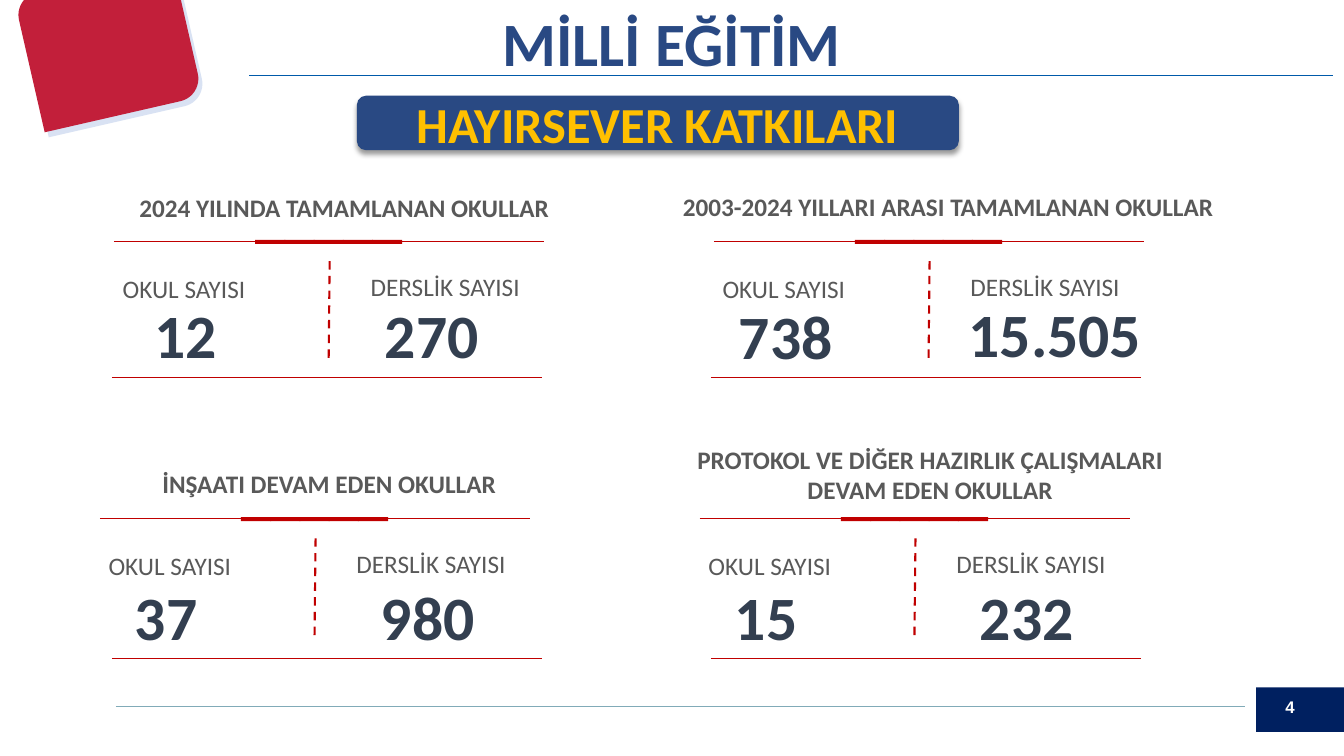
from lxml import etree
from pptx import Presentation
from pptx.dml.color import RGBColor
from pptx.enum.dml import MSO_LINE
from pptx.enum.shapes import MSO_CONNECTOR, MSO_SHAPE
from pptx.enum.text import MSO_ANCHOR, MSO_AUTO_SIZE, PP_ALIGN
from pptx.oxml.ns import qn
from pptx.util import Emu, Pt

RECT = MSO_SHAPE.RECTANGLE
ROUND = MSO_SHAPE.ROUNDED_RECTANGLE
DIAG = MSO_SHAPE.ROUND_2_DIAG_RECTANGLE
LINE = MSO_CONNECTOR.STRAIGHT
DASH = MSO_LINE.DASH
LEFT = PP_ALIGN.LEFT
MID = PP_ALIGN.CENTER
TOP = MSO_ANCHOR.TOP
CENTER = MSO_ANCHOR.MIDDLE
FIXED = MSO_AUTO_SIZE.NONE

NAVY, RED, GRAY = "294983", "C00000", "595959"
BANNER = {"size": Pt(36), "bold": True, "name": "Calibri", "color": "FFC000"}
TITLE = {"size": Pt(44), "bold": True, "name": "Calibri", "color": NAVY}
VALUE = {"size": Pt(44), "bold": True, "name": "Calibri", "color": "333F50"}
HEAD = {"size": Pt(18), "bold": True, "name": "Calibri", "color": GRAY}
LABEL = {"size": Pt(18), "bold": False, "name": "Calibri", "color": GRAY}
PAGE = {"size": Pt(12), "bold": True, "name": "Arial", "color": "FFFFFF"}


def px(num):
    """Turn px, a hundred to the inch, into EMU."""
    return Emu(num * 9144)


def rgb(code):
    """Turn a hex string into a colour."""
    return RGBColor.from_string(code)


def alpha(node, share):
    """Make a colour node see-through, with share in percent."""
    etree.SubElement(node, qn("a:alpha"), val=str(share * 1000))


class Page:
    """Holds the slide and draws each kind of element on it."""

    def __init__(self, deck):
        """Add a title-only slide."""
        self.slide = deck.slides.add_slide(deck.slide_layouts[5])
        self.items = self.slide.shapes

    def label(self, shape, text, style, align=MID, anchor=TOP, wrap=True):
        """Put styled text in a shape."""
        frame = shape.text_frame
        form = {"word_wrap": wrap, "auto_size": FIXED, "vertical_anchor": anchor,
                "margin_left": px(10), "margin_right": px(10),
                "margin_top": px(5), "margin_bottom": px(5)}
        for key, val in form.items():
            setattr(frame, key, val)
        para = frame.paragraphs[0]
        para.alignment = align
        run = para.add_run()
        run.text = text
        for key, val in style.items():
            if key == "color":
                run.font.color.rgb = rgb(val)
            else:
                setattr(run.font, key, val)

    def title(self, text, box):
        """Move and fill the title placeholder."""
        shape = self.items.title
        for key, val in zip(("left", "top", "width", "height"), box):
            setattr(shape, key, px(val))
        self.label(shape, text, TITLE)

    def text(self, text, box, style, **form):
        """Add a text box."""
        self.label(self.items.add_textbox(*map(px, box)), text, style, **form)

    def block(self, kind, box, fill, turn=0):
        """Add a flat filled shape."""
        shape = self.items.add_shape(kind, *map(px, box))
        shape.shadow.inherit = False
        shape.fill.solid()
        shape.fill.fore_color.rgb = rgb(fill)
        shape.line.fill.background()
        shape.rotation = turn
        return shape

    def line(self, ends, color, width, dash=None):
        """Add a straight line."""
        rule = self.items.add_connector(LINE, *map(px, ends))
        rule.line.color.rgb = rgb(color)
        rule.line.width = Pt(width)
        if dash:
            rule.line.dash_style = dash
        etree.SubElement(rule._element.spPr, qn("a:effectLst"))

    def shade(self, shape):
        """Drop a soft shadow below a shape."""
        glow = shape._element.spPr.find(qn("a:effectLst"))
        drop = etree.SubElement(glow, qn("a:outerShdw"), blurRad=str(Pt(4)),
                                dist=str(Pt(3)), dir="5400000", rotWithShape="0")
        tone = etree.SubElement(drop, qn("a:srgbClr"), val="000000")
        alpha(tone, 40)

    def panel(self, x, y, head, schools, rooms):
        """Add a heading with its two counts."""
        for i in range(5):
            self.block(RECT, (x + 140 + 29 * i, y - 1, 30, 4), RED)
        self.line((x, y, x + 427, y), RED, 0.5)
        self.line((x + 213, y + 116, x + 214, y + 20), RED, 1.5, DASH)
        self.text(*head, HEAD)
        self.text("OKUL SAYISI", (x - 2, y + 27, 143, 40), LABEL, wrap=False)
        self.text("DERSLİK SAYISI", (x + 241, y + 25, 175, 40), LABEL, wrap=False)
        for text, box in (schools, rooms):
            self.text(text, box, VALUE, align=LEFT, wrap=False)


def main():
    """Build the slide and save it."""
    deck = Presentation()
    deck.slide_width, deck.slide_height = px(1333), px(750)
    page = Page(deck)
    page.title("MİLLİ EĞİTİM", (130, 0, 1073, 84))

    page.line((115, 701, 1235, 701), "81ABB8", 0.75)
    page.block(RECT, (1246, 682, 87, 44), "002060")
    page.text("4", (1265, 686, 99, 30), PAGE, align=LEFT)
    page.line((247, 75, 1322, 75), "005AAA", 1)
    back = page.block(DIAG, (31, -17, 161, 137), "4472C4", 347.1)
    alpha(back._element.spPr.find(".//" + qn("a:srgbClr")), 20)
    page.block(DIAG, (27, -22, 161, 137), "C21F3A", 347.1)

    banner = page.block(ROUND, (354, 95, 597, 54), NAVY)
    page.shade(banner)
    page.label(banner, "HAYIRSEVER KATKILARI", BANNER, anchor=CENTER)

    panels = (
        (113, 239, ("2024 YILINDA TAMAMLANAN OKULLAR", (81, 186, 521, 40)),
         ("12", (143, 290, 83, 84)), ("270", (372, 290, 114, 84))),
        (99, 514, ("İNŞAATI DEVAM EDEN OKULLAR", (66, 460, 521, 40)),
         ("37", (124, 569, 83, 84)), ("980", (368, 569, 114, 84))),
        (708, 239, ("2003-2024 YILLARI ARASI TAMAMLANAN OKULLAR", (666, 185, 549, 40)),
         ("738", (723, 291, 114, 84)), ("15.505", (951, 289, 193, 84))),
        (694, 514, ("PROTOKOL VE DİĞER HAZIRLIK ÇALIŞMALARI DEVAM EDEN OKULLAR",
                    (662, 436, 521, 71)),
         ("15", (719, 569, 83, 84)), ("232", (962, 569, 114, 84))),
    )
    for panel in panels:
        page.panel(*panel)
    for x in (111, 705):
        for y in (374, 653):
            page.line((x, y, x + 427, y), RED, 0.5)
    deck.save("out.pptx")


if __name__ == "__main__":
    main()
